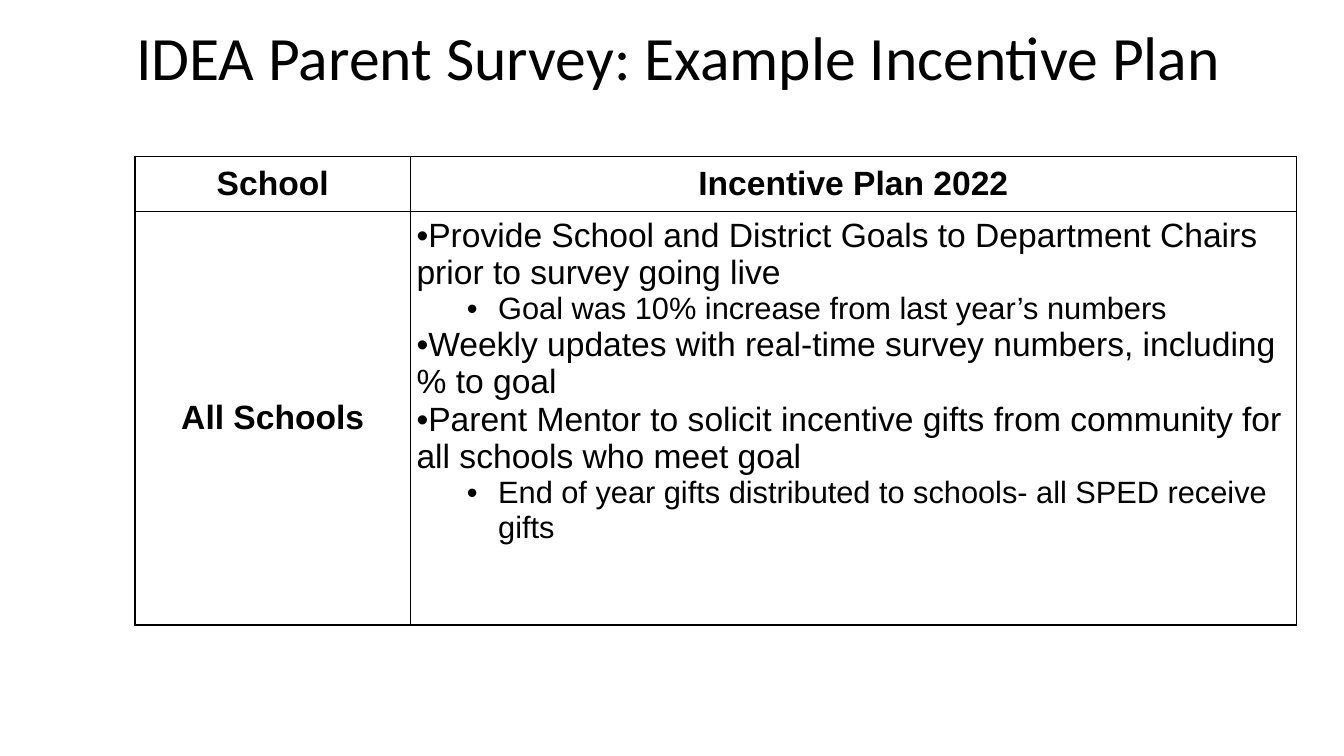
from dataclasses import dataclass

from lxml import etree
from pptx import Presentation
from pptx.dml.color import RGBColor
from pptx.enum.text import MSO_ANCHOR, MSO_AUTO_SIZE, PP_ALIGN
from pptx.oxml.ns import qn
from pptx.util import Pt

LEFT, CENTER = PP_ALIGN.LEFT, PP_ALIGN.CENTER
TOP, MIDDLE = MSO_ANCHOR.TOP, MSO_ANCHOR.MIDDLE
NO_AUTOFIT = MSO_AUTO_SIZE.NONE

COLORS = {"text": "000000", "border": "000000"}
TITLE_ONLY_LAYOUT = 5
COLUMN_WIDTHS = (196.6, 632.9)
ROW_HEIGHTS = (39.6, 295.2)
SUB_BULLET_MARGIN, SUB_BULLET_HANGING = 58.3, 22.3


@dataclass
class Line:
    text: str
    size: float = 24
    bold: bool = False
    bullet: bool = False
    level: int = 0


@dataclass
class CellContent:
    row: int
    column: int
    lines: list[Line]
    alignment: PP_ALIGN = CENTER
    anchor: MSO_ANCHOR = MIDDLE


def heading(text: str) -> list[Line]:
    return [Line(text, bold=True)]


def goal(text: str) -> Line:
    return Line(text, bullet=True)


def detail(text: str) -> Line:
    return Line(text, size=22, bullet=True, level=1)


CELLS = [
    CellContent(0, 0, heading("School")),
    CellContent(0, 1, heading("Incentive Plan 2022")),
    CellContent(1, 0, heading("All Schools")),
    CellContent(1, 1, [
        goal("Provide School and District Goals to Department Chairs prior to survey going live"),
        detail("Goal was 10% increase from last year’s numbers"),
        goal("Weekly updates with real-time survey numbers, including % to goal"),
        goal("Parent Mentor to solicit incentive gifts from community for all schools who meet goal"),
        detail("End of year gifts distributed to schools- all SPED receive gifts"),
    ], LEFT, TOP),
]


def format_runs(paragraph, font_name: str, size: float, bold: bool = False) -> None:
    for run in paragraph.runs:
        run.font.name = font_name
        run.font.size = Pt(size)
        run.font.bold = bold
        run.font.color.rgb = RGBColor.from_string(COLORS["text"])


def add_bullet(paragraph, level: int) -> None:
    """Set a bullet; level 0 runs flush left, level 1 hangs."""
    paragraph.level = level
    properties = paragraph._p.get_or_add_pPr()
    properties.set("marL", str(Pt(SUB_BULLET_MARGIN * level)))
    properties.set("indent", str(-Pt(SUB_BULLET_HANGING * level)))
    font = etree.SubElement(properties, qn("a:buFont"))
    font.set("typeface", "Arial")
    etree.SubElement(properties, qn("a:buChar")).set("char", "•")


def add_borders(cell, width: float = 1) -> None:
    properties = cell._tc.get_or_add_tcPr()
    for position, side in enumerate(("lnL", "lnR", "lnT", "lnB")):
        border = etree.Element(qn(f"a:{side}"), w=str(Pt(width)))
        fill = etree.SubElement(border, qn("a:solidFill"))
        etree.SubElement(fill, qn("a:srgbClr")).set("val", COLORS["border"])
        properties.insert(position, border)


def fill_cell(cell, content: CellContent) -> None:
    cell.fill.background()
    add_borders(cell)
    cell.vertical_anchor = content.anchor
    cell.margin_left = cell.margin_right = Pt(4.5)
    cell.margin_top = cell.margin_bottom = Pt(3.6)
    text_frame = cell.text_frame
    text_frame.text = "\n".join(line.text for line in content.lines)
    for paragraph, line in zip(text_frame.paragraphs, content.lines):
        paragraph.alignment = content.alignment
        if line.bullet:
            add_bullet(paragraph, line.level)
        format_runs(paragraph, "Arial", line.size, line.bold)


def add_title(slide) -> None:
    title = slide.shapes.title
    title.left, title.top = Pt(90), Pt(15.8)
    title.width, title.height = Pt(803.5), Pt(104.4)
    text_frame = title.text_frame
    text_frame.text = "IDEA Parent Survey: Example Incentive Plan"
    text_frame.word_wrap = True
    text_frame.auto_size = NO_AUTOFIT
    text_frame.vertical_anchor = TOP
    paragraph = text_frame.paragraphs[0]
    paragraph.alignment = LEFT
    paragraph.line_spacing = 0.9
    format_runs(paragraph, "Calibri", 44)


def add_incentive_table(slide) -> None:
    frame = slide.shapes.add_table(
        len(ROW_HEIGHTS), len(COLUMN_WIDTHS), Pt(96.5), Pt(111.6),
        Pt(sum(COLUMN_WIDTHS)), Pt(sum(ROW_HEIGHTS)))
    table = frame.table
    table.first_row = table.horz_banding = False
    for column, width in zip(table.columns, COLUMN_WIDTHS):
        column.width = Pt(width)
    for row, height in zip(table.rows, ROW_HEIGHTS):
        row.height = Pt(height)
    for content in CELLS:
        fill_cell(table.cell(content.row, content.column), content)


def main() -> None:
    presentation = Presentation()
    presentation.slide_width, presentation.slide_height = Pt(960), Pt(540)
    slide = presentation.slides.add_slide(presentation.slide_layouts[TITLE_ONLY_LAYOUT])
    add_title(slide)
    add_incentive_table(slide)
    presentation.save("out.pptx")


if __name__ == "__main__":
    main()
